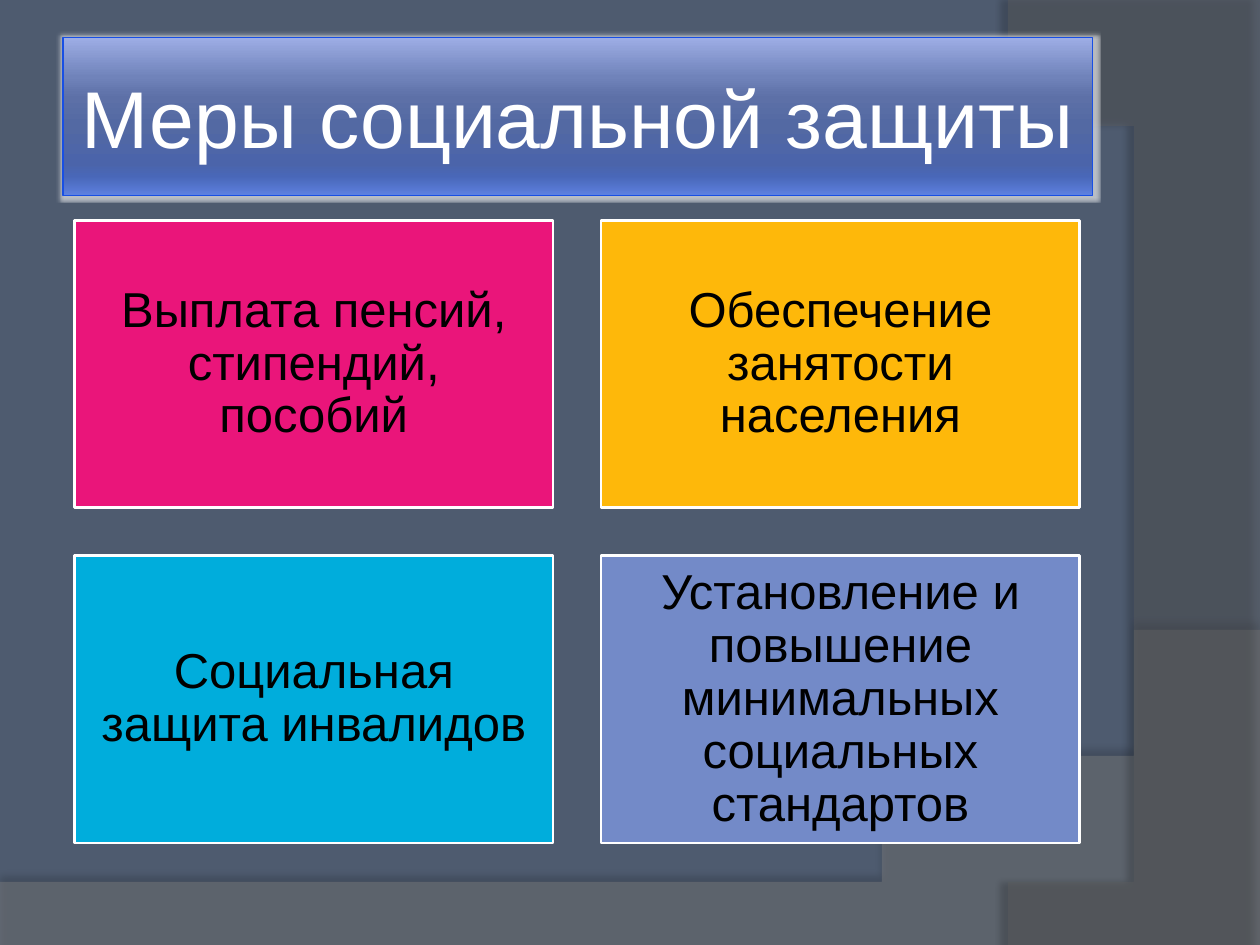
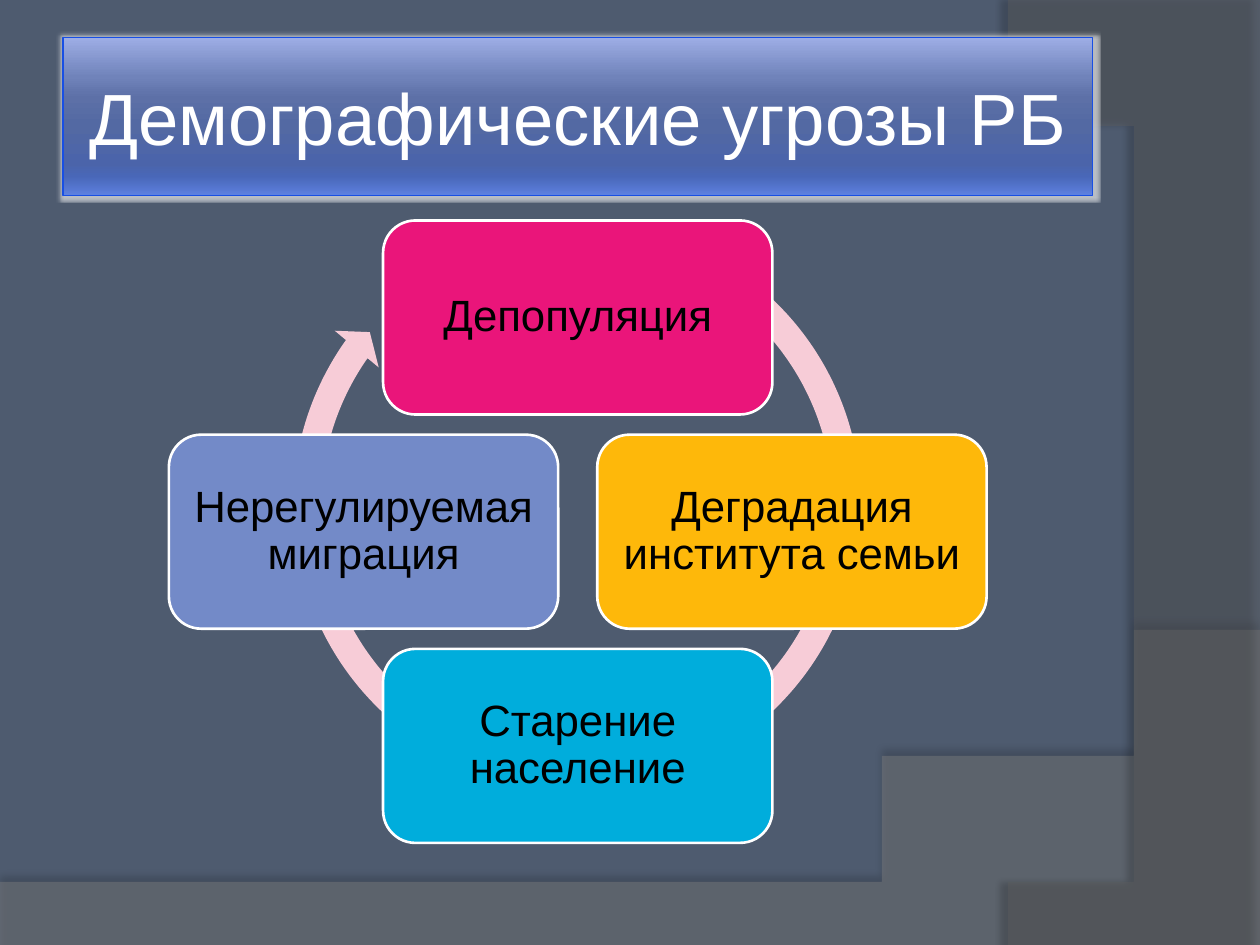
"""Builds two slides on social protection measures and demographic threats."""
from lxml import etree
from pptx import Presentation
from pptx.dml.color import RGBColor
from pptx.enum.shapes import MSO_SHAPE
from pptx.enum.text import MSO_ANCHOR, MSO_AUTO_SIZE, PP_ALIGN
from pptx.oxml.ns import qn
from pptx.util import Inches, Pt

RECTANGLE = MSO_SHAPE.RECTANGLE
ROUNDED = MSO_SHAPE.ROUNDED_RECTANGLE
CIRCULAR_ARROW = MSO_SHAPE.CIRCULAR_ARROW
MIDDLE = MSO_ANCHOR.MIDDLE
NO_AUTOFIT = MSO_AUTO_SIZE.NONE
CENTER = PP_ALIGN.CENTER

FONT = "Arial"
BACKGROUND = RGBColor(0x4E, 0x5B, 0x6F)
LOWER_BAND = RGBColor(0x7F, 0x7F, 0x7F)
RIGHT_BAND = RGBColor(0x5E, 0x5E, 0x5E)
TITLE_BORDER = RGBColor(0x18, 0x4F, 0xE4)
PINK = RGBColor(0xEA, 0x15, 0x7A)
AMBER = RGBColor(0xFE, 0xB8, 0x0A)
CYAN = RGBColor(0x00, 0xAD, 0xDC)
PERIWINKLE = RGBColor(0x73, 0x8A, 0xC8)
PALE_PINK = RGBColor(0xF7, 0xCC, 0xD7)
WHITE = RGBColor(0xFF, 0xFF, 0xFF)
BLACK = RGBColor(0x00, 0x00, 0x00)
TILE_COLORS = (PINK, AMBER, CYAN, PERIWINKLE)
TITLE_GRADIENT = (
    (0, RGBColor(0x9D, 0xAD, 0xE5)),
    (25, RGBColor(0x70, 0x83, 0xBA)),
    (38, RGBColor(0x5D, 0x70, 0xA7)),
    (55, RGBColor(0x53, 0x69, 0xA3)),
    (80, RGBColor(0x4B, 0x64, 0xAA)),
    (88, RGBColor(0x49, 0x67, 0xB8)),
    (100, RGBColor(0x5D, 0x80, 0xDF)),
)

MEASURES = (
    "Выплата пенсий, стипендий, пособий",
    "Обеспечение занятости населения",
    "Социальная защита инвалидов",
    "Установление и повышение минимальных социальных стандартов",
)
THREATS = (
    "Депопуляция",
    "Деградация института семьи",
    "Старение население",
    "Нерегулируемая миграция",
)


def add_color(parent, color, opacity=100):
    """Append an RGB colour with an opacity in percent."""
    node = etree.SubElement(parent, qn("a:srgbClr"), val=str(color))
    etree.SubElement(node, qn("a:alpha"), val=str(opacity * 1000))


def add_effect(shape, kind, color, opacity, **settings):
    """Give a shape a single glow or shadow."""
    shape.shadow.inherit = False
    effects = shape.element.spPr.find(qn("a:effectLst"))
    values = {name: str(value) for name, value in settings.items()}
    add_color(etree.SubElement(effects, qn(kind), values), color, opacity)


def write_text(shape, text, size, color, margin, spacing=1.0):
    """Write centred text with equal margins on all sides."""
    frame = shape.text_frame
    frame.text = text
    settings = {"word_wrap": True, "auto_size": NO_AUTOFIT, "vertical_anchor": MIDDLE}
    for side in ("left", "right", "top", "bottom"):
        settings[f"margin_{side}"] = Inches(margin)
    for name, value in settings.items():
        setattr(frame, name, value)
    paragraph = frame.paragraphs[0]
    paragraph.alignment = CENTER
    paragraph.line_spacing = spacing
    font = paragraph.runs[0].font
    for name, value in {"name": FONT, "size": Pt(size), "bold": False}.items():
        setattr(font, name, value)
    font.color.rgb = color


def curve_points(start, control_1, control_2, end, steps=40):
    """Return points along a cubic curve."""
    points = []
    for step in range(steps + 1):
        t = step / steps
        weights = ((1 - t) ** 3, 3 * t * (1 - t) ** 2, 3 * t * t * (1 - t), t ** 3)
        corners = zip(start, control_1, control_2, end)
        points.append(tuple(sum(w * c for w, c in zip(weights, axis)) for axis in corners))
    return points


def add_band(slide, layout, order, points, color, opacity, shadow):
    """Draw a translucent background band and place it in the layout."""
    builder = slide.shapes.build_freeform(*points[0], scale=Inches(1))
    builder.add_line_segments(points[1:], close=True)
    band = builder.convert_to_shape()
    band.fill.solid()
    band.fill.fore_color.rgb = color
    tint = band.element.spPr.find(qn("a:solidFill")).find(qn("a:srgbClr"))
    etree.SubElement(tint, qn("a:alpha"), val=str(opacity * 1000))
    band.line.fill.background()
    shade, distance, angle = shadow
    add_effect(band, "a:outerShdw", BLACK, shade, blurRad=Pt(4),
               dist=Pt(distance), dir=angle * 60000)
    band.element.nvSpPr.cNvPr.id = 100 + order
    layout.shapes.element.insert(2 + order, band.element)


def add_backdrop(slide, layout):
    """Set the background colour and both curved bands of the layout."""
    layout.background.fill.solid()
    layout.background.fill.fore_color.rgb = BACKGROUND
    lower = [(0, 7.05), (0, 7.5), (10, 7.5)]
    lower += curve_points((10, 5.2), (5.59, 7.29), (3.91, 7.19), (0, 7.05))
    right = [(10, 0.02), (10, 7.5)]
    right += curve_points((8.21, 7.5), (9.35, 6.19), (10.18, 3), (8, 0))
    add_band(slide, layout, 0, lower, LOWER_BAND, 45, (35, 3.5, 270))
    add_band(slide, layout, 1, right, RIGHT_BAND, 40, (45, 4, 180))


def set_title(slide, text, size):
    """Place the title in its glowing gradient panel."""
    title = slide.shapes.title
    place = {"left": 0.5, "top": 0.3, "width": 8.17, "height": 1.25}
    for name, value in place.items():
        setattr(title, name, Inches(value))
    title.fill.gradient()
    title.fill.gradient_angle = 270
    stops = title.element.spPr.find(qn("a:gradFill")).find(qn("a:gsLst"))
    for stop in list(stops):
        stops.remove(stop)
    for position, color in TITLE_GRADIENT:
        stop = etree.SubElement(stops, qn("a:gs"), pos=str(position * 1000))
        add_color(stop, color)
    title.line.color.rgb = TITLE_BORDER
    title.line.width = Pt(0.75)
    add_effect(title, "a:glow", WHITE, 60, rad=Pt(4))
    write_text(title, text, size, WHITE, 0.05)


def add_tile(slide, kind, place, text, color, size, margin):
    """Add a coloured tile with a white border."""
    tile = slide.shapes.add_shape(kind, *map(Inches, place))
    tile.shadow.inherit = False
    tile.fill.solid()
    tile.fill.fore_color.rgb = color
    tile.line.color.rgb = WHITE
    tile.line.width = Pt(1.5)
    write_text(tile, text, size, BLACK, margin, 0.9)


def add_measures(slide):
    """Lay out the measures in a two by two grid."""
    width, height, gap = 3.8, 2.28, 0.38
    for index, (text, color) in enumerate(zip(MEASURES, TILE_COLORS)):
        row, column = divmod(index, 2)
        place = (0.59 + column * (width + gap), 1.75 + row * (height + gap), width, height)
        add_tile(slide, RECTANGLE, place, text, color, 28, 0.12)


def add_threat_cycle(slide):
    """Arrange the threats clockwise over a circular arrow."""
    cycle = slide.shapes.add_shape(CIRCULAR_ARROW, *map(Inches, (2.21, 1.64, 4.74, 4.74)))
    cycle.shadow.inherit = False
    for index, value in enumerate((0.047, 2.729, 129.197, 179.709, 0.048)):
        cycle.adjustments[index] = value
    cycle.fill.solid()
    cycle.fill.fore_color.rgb = PALE_PINK
    cycle.line.fill.background()
    directions = ((0, -1), (1, 0), (0, 1), (-1, 0))
    for text, color, (across, down) in zip(THREATS, TILE_COLORS, directions):
        place = (3.04 + 1.7 * across, 3.45 + 1.7 * down, 3.09, 1.54)
        add_tile(slide, ROUNDED, place, text, color, 25, 0.1)


def main():
    """Build and save the presentation."""
    deck = Presentation()
    deck.slide_width, deck.slide_height = Inches(10), Inches(7.5)
    layout = deck.slide_layouts[5]
    measures = deck.slides.add_slide(layout)
    add_backdrop(measures, layout)
    set_title(measures, "Меры социальной защиты", 46)
    add_measures(measures)
    threats = deck.slides.add_slide(layout)
    set_title(threats, "Демографические угрозы РБ", 41.4)
    add_threat_cycle(threats)
    deck.save("out.pptx")


if __name__ == "__main__":
    main()
